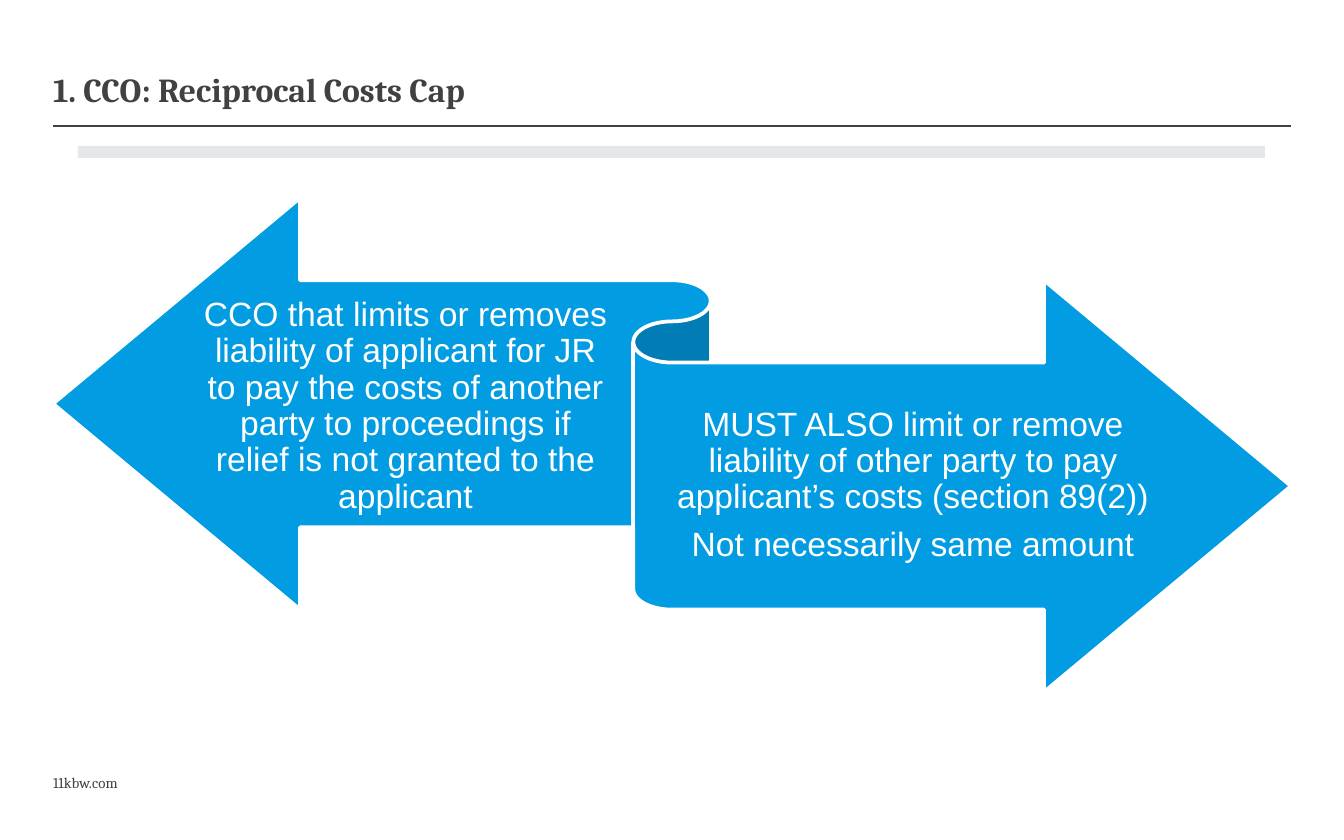
from pptx import Presentation
from pptx.dml.color import RGBColor
from pptx.enum.shapes import MSO_CONNECTOR, MSO_SHAPE
from pptx.enum.text import MSO_ANCHOR, MSO_AUTO_SIZE, PP_ALIGN
from pptx.oxml.ns import qn
from pptx.util import Emu, Pt
from lxml import etree

LEFT, CENTER = PP_ALIGN.LEFT, PP_ALIGN.CENTER
TOP, MIDDLE = MSO_ANCHOR.TOP, MSO_ANCHOR.MIDDLE
TITLE_ONLY = 5

COLORS = {"ink": "414042", "band": "E6E7E8", "ribbon": "029CE2", "white": "FFFFFF"}

# Content, with boxes as left, top, width, height in px
TITLE = "1. CCO: Reciprocal Costs Cap"
TITLE_BOX = (53, 69, 913, 47)
FOOTER = "11kbw.com"
FOOTER_BOX = (53, 774, 593, 19)
RULE = (53, 126, 1291, 126)
BAND_BOX = (78, 146, 1187, 12)
RIBBON_BOX = (53, 198, 1238, 494)
ARROW_TEXTS = [
    ((201, 285, 409, 243), [
        "CCO that limits or removes liability of applicant for JR to pay "
        "the costs of another party to proceedings if relief is not granted "
        "to the applicant",
    ]),
    ((672, 364, 482, 243), [
        "MUST ALSO limit or remove liability of other party to pay "
        "applicant’s costs (section 89(2))",
        "Not necessarily same amount",
    ]),
]


def px(*lengths):
    return [Emu(round(length * 914400 / 134.4)) for length in lengths]


def color(name):
    return RGBColor.from_string(COLORS[name])


def write(holder, paragraphs, font, size, ink, align=LEFT, anchor=TOP,
          inset=0, bold=False, spacing=1.0, after=0):
    frame = holder.text_frame
    frame.text = "\n".join(paragraphs)
    frame.word_wrap = True
    frame.auto_size = MSO_AUTO_SIZE.NONE
    frame.vertical_anchor = anchor
    frame.margin_left = frame.margin_right = 0
    frame.margin_top = frame.margin_bottom = px(inset)[0]
    for paragraph in frame.paragraphs:
        paragraph.alignment = align
        paragraph.line_spacing = spacing
        paragraph.space_before = Pt(0)
        paragraph.space_after = Pt(after)
        for run in paragraph.runs:
            run.font.name, run.font.size, run.font.bold = font, Pt(size), bold
            run.font.color.rgb = color(ink)


def add_filled(kind, box, fill):
    shape = slide.shapes.add_shape(kind, *px(*box))
    shape.shadow.inherit = False
    shape.fill.solid()
    shape.fill.fore_color.rgb = color(fill)
    return shape


prs = Presentation()
prs.slide_width, prs.slide_height = px(1344, 840)
slide = prs.slides.add_slide(prs.slide_layouts[TITLE_ONLY])

# Heading with rule and band
title = slide.shapes.title
title.left, title.top, title.width, title.height = px(*TITLE_BOX)
write(title, [TITLE], "Cambria", 18, "ink", bold=True)

rule = slide.shapes.add_connector(MSO_CONNECTOR.STRAIGHT, *px(*RULE))
rule.line.color.rgb = color("ink")
rule.line.width = Pt(0.75)
etree.SubElement(rule.element.spPr, qn("a:effectLst"))

band = add_filled(MSO_SHAPE.RECTANGLE, BAND_BOX, "band")
band.line.fill.background()

# Two-way ribbon with a text on each arrow
ribbon = add_filled(MSO_SHAPE.LEFT_RIGHT_RIBBON, RIBBON_BOX, "ribbon")
ribbon.line.color.rgb = color("white")
ribbon.line.width = Pt(2)

for box, paragraphs in ARROW_TEXTS:
    arrow_text = slide.shapes.add_textbox(*px(*box))
    write(arrow_text, paragraphs, "Arial", 18, "white", CENTER, MIDDLE,
          inset=9, spacing=0.9, after=6.3)

# Footer
footer = slide.shapes.add_textbox(*px(*FOOTER_BOX))
write(footer, [FOOTER], "Cambria", 8, "ink")

prs.save("out.pptx")
